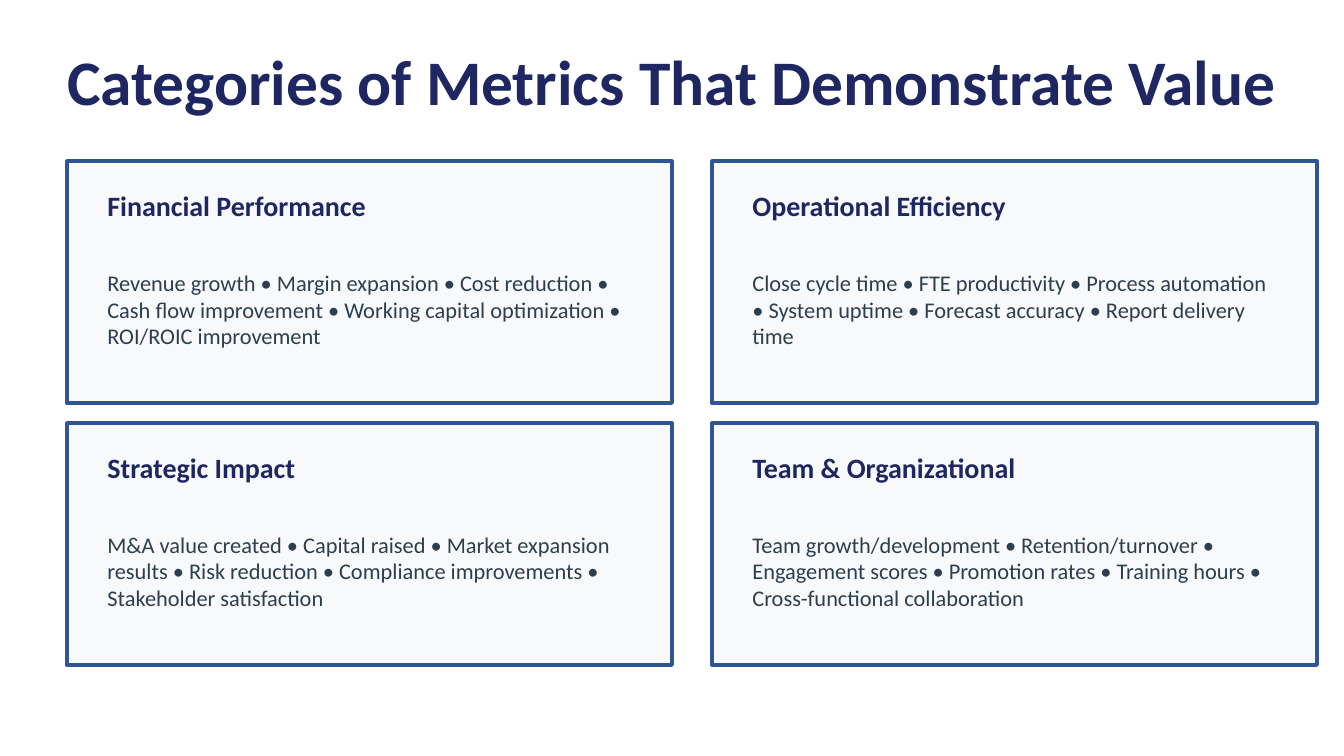
from dataclasses import dataclass

from pptx import Presentation
from pptx.dml.color import RGBColor
from pptx.enum.shapes import MSO_SHAPE as Shape
from pptx.enum.text import MSO_ANCHOR as Anchor, MSO_AUTO_SIZE as AutoSize, PP_ALIGN as Align
from pptx.slide import Slide
from pptx.text.text import TextFrame
from pptx.util import Cm, Pt

COLORS = {"navy": "1E2761", "border": "2F5597", "card": "F8F9FA", "body": "2C3E50"}
FORMATS = {
    "title": {"size": Pt(34), "bold": True},
    "heading": {"size": Pt(15), "bold": True},
    "body": {"size": Pt(12), "bold": False},
}
TEXT_COLORS = {"title": "navy", "heading": "navy", "body": "body"}

LEFT, TOP = 1.27, 3.05
CARD_W, CARD_H = 11.43, 4.57
STEP_X, STEP_Y = 12.19, 4.95
PAD_X = 0.51
COLUMNS = 2


@dataclass
class Category:
    heading: str
    metrics: list[str]


CATEGORIES = [
    Category("Financial Performance", [
        "Revenue growth", "Margin expansion", "Cost reduction",
        "Cash flow improvement", "Working capital optimization", "ROI/ROIC improvement"]),
    Category("Operational Efficiency", [
        "Close cycle time", "FTE productivity", "Process automation",
        "System uptime", "Forecast accuracy", "Report delivery time"]),
    Category("Strategic Impact", [
        "M&A value created", "Capital raised", "Market expansion results",
        "Risk reduction", "Compliance improvements", "Stakeholder satisfaction"]),
    Category("Team & Organizational", [
        "Team growth/development", "Retention/turnover", "Engagement scores",
        "Promotion rates", "Training hours", "Cross-functional collaboration"]),
]


def rgb(name: str) -> RGBColor:
    return RGBColor.from_string(COLORS[name])


def write_text(tf: TextFrame, text: str, style: str) -> None:
    tf.word_wrap = True
    tf.auto_size = AutoSize.NONE
    tf.vertical_anchor = Anchor.MIDDLE
    p = tf.paragraphs[0]
    p.alignment = Align.LEFT
    r = p.add_run()
    r.text = text
    r.font.name = "Calibri"
    r.font.color.rgb = rgb(TEXT_COLORS[style])
    for key, value in FORMATS[style].items():
        setattr(r.font, key, value)


def add_title(s: Slide, text: str) -> None:
    sp = s.shapes.title
    sp.left, sp.top, sp.width, sp.height = Cm(LEFT), Cm(0.76), Cm(22.86), Cm(1.52)
    tf = sp.text_frame
    for side in ("left", "top", "right", "bottom"):
        setattr(tf, f"margin_{side}", 0)
    write_text(tf, text, "title")


def add_card(s: Slide, category: Category, x: float, y: float) -> None:
    sp = s.shapes.add_shape(Shape.RECTANGLE, Cm(x), Cm(y), Cm(CARD_W), Cm(CARD_H))
    sp.shadow.inherit = False
    sp.fill.solid()
    sp.fill.fore_color.rgb = rgb("card")
    sp.line.color.rgb = rgb("border")
    sp.line.width = Pt(2)

    parts = [
        ("heading", category.heading, 0.38, 0.89),
        ("body", " • ".join(category.metrics), 1.4, 2.79),
    ]
    for style, text, offset, height in parts:
        box = s.shapes.add_textbox(
            Cm(x + PAD_X), Cm(y + offset), Cm(CARD_W - 2 * PAD_X), Cm(height))
        write_text(box.text_frame, text, style)


def main() -> None:
    prs = Presentation()
    prs.slide_width, prs.slide_height = Cm(25.4), Cm(14.29)
    s = prs.slides.add_slide(prs.slide_layouts[5])
    add_title(s, "Categories of Metrics That Demonstrate Value")
    for i, category in enumerate(CATEGORIES):
        row, column = divmod(i, COLUMNS)
        add_card(s, category, LEFT + column * STEP_X, TOP + row * STEP_Y)
    prs.save("out.pptx")


if __name__ == "__main__":
    main()
